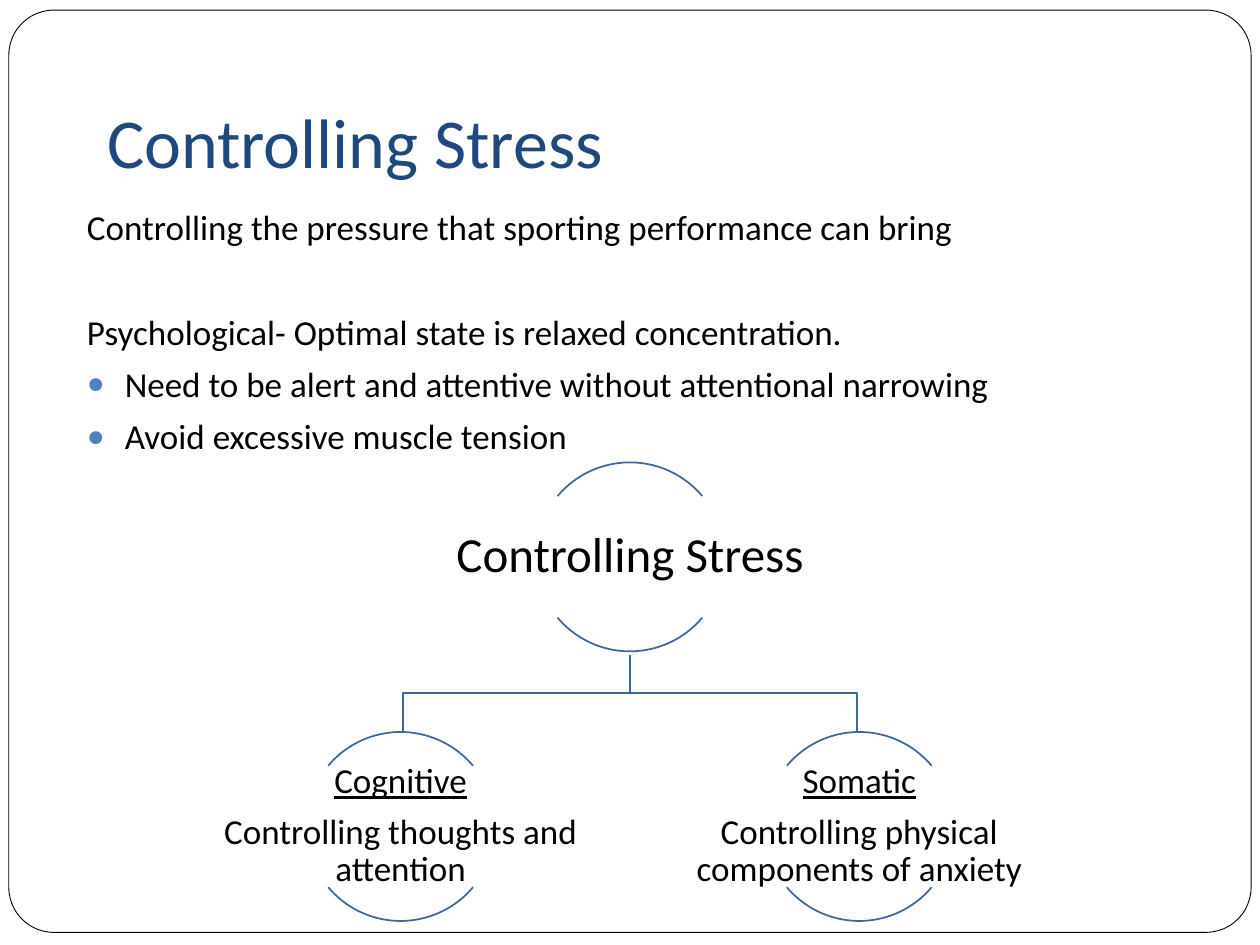
"""Builds a slide on controlling stress with a two-branch hierarchy."""
from dataclasses import dataclass

from lxml.etree import SubElement
from pptx import Presentation
from pptx.dml.color import RGBColor
from pptx.enum.shapes import MSO_SHAPE as Preset
from pptx.enum.text import MSO_ANCHOR as Anchor, MSO_AUTO_SIZE as AutoSize, PP_ALIGN as Align
from pptx.oxml.ns import qn
from pptx.util import Inches, Pt

COLUMNS, ROWS = 100, 75


@dataclass(frozen=True)
class Theme:
    font: str = "Calibri"
    title: str = "1F497D"
    ink: str = "000000"
    paper: str = "FFFFFF"
    branch: str = "3F6797"
    bullet: str = "4F81BD"
    title_size: int = 40
    root_size: int = 28
    text_size: int = 20
    list_gap: float = 5.8


class StressSlide:
    def __init__(self, deck, theme):
        self.theme = theme
        self.column = deck.slide_width / COLUMNS
        self.row = deck.slide_height / ROWS
        self.slide = deck.slides.add_slide(deck.slide_layouts[1])
        self.shapes = self.slide.shapes

    def place(self, left, top, width, height):
        return (round(left * self.column), round(top * self.row),
                round(width * self.column), round(height * self.row))

    def move(self, holder, *box):
        holder.left, holder.top, holder.width, holder.height = self.place(*box)

    def type(self, paragraph, size, color, underline=None):
        font = paragraph.font
        font.name, font.size, font.underline = self.theme.font, Pt(size), underline
        font.color.rgb = RGBColor.from_string(color)

    def outline(self, shape, color, width):
        shape.shadow.inherit = False
        shape.fill.background()
        shape.line.color.rgb = RGBColor.from_string(color)
        shape.line.width = Pt(width)

    def frame(self, *box):
        border = self.shapes.add_shape(Preset.ROUNDED_RECTANGLE, *self.place(*box))
        border.adjustments[0] = 0.049
        self.outline(border, self.theme.ink, 0.5)
        border.fill.solid()
        border.fill.fore_color.rgb = RGBColor.from_string(self.theme.paper)
        border.element.getparent().insert(2, border.element)

    def title(self, wording, *box):
        heading = self.shapes.title
        self.move(heading, *box)
        frame = heading.text_frame
        frame.text = wording
        frame.auto_size = AutoSize.NONE
        frame.vertical_anchor = Anchor.BOTTOM
        frame.margin_bottom = Inches(0.1)
        frame.paragraphs[0].alignment = Align.LEFT
        self.type(frame.paragraphs[0], self.theme.title_size, self.theme.title)

    def points(self, entries, *box):
        body = self.slide.placeholders[1]
        self.move(body, *box)
        frame = body.text_frame
        frame.auto_size = AutoSize.NONE
        frame.text = "\n".join(wording for wording, _, _ in entries)
        for paragraph, (_, bulleted, gap) in zip(frame.paragraphs, entries):
            self.bullet(paragraph, bulleted)
            paragraph.space_before = Pt(gap)
            self.type(paragraph, self.theme.text_size, self.theme.ink)

    def bullet(self, paragraph, bulleted):
        properties = paragraph._p.get_or_add_pPr()
        indent = Inches(0.3) if bulleted else 0
        properties.set("marL", str(indent))
        properties.set("indent", str(-indent))
        if not bulleted:
            SubElement(properties, qn("a:buNone"))
            return
        color = SubElement(properties, qn("a:buClr"))
        SubElement(color, qn("a:srgbClr"), val=self.theme.bullet)
        SubElement(properties, qn("a:buSzPct"), val="85000")
        SubElement(properties, qn("a:buChar"), char="●")

    def branch(self, start_x, start_y, end_x, end_y):
        middle = (start_y + end_y) / 2
        corners = [(start_x, middle), (end_x, middle), (end_x, end_y)]
        builder = self.shapes.build_freeform(start_x, start_y, scale=(self.column, self.row))
        builder.add_line_segments(corners, close=False)
        self.outline(builder.convert_to_shape(), self.theme.branch, 1)

    def node(self, center, top, lines, size, diameter=15):
        for start, end in ((132, 192), (24, 84)):
            arc = self.shapes.add_shape(
                Preset.ARC, *self.place(center - diameter / 2, top, diameter, diameter))
            arc.adjustments[0], arc.adjustments[1] = start, end
            self.outline(arc, self.theme.branch, 1)
        label = self.shapes.add_textbox(
            *self.place(center - diameter, top + 2.7, 2 * diameter, 9.6))
        frame = label.text_frame
        frame.word_wrap = True
        frame.vertical_anchor = Anchor.MIDDLE
        frame.margin_left = frame.margin_right = Inches(0.01)
        frame.margin_top = frame.margin_bottom = Inches(0.01)
        frame.text = "\n".join(lines)
        for position, paragraph in enumerate(frame.paragraphs):
            paragraph.alignment = Align.CENTER
            paragraph.line_spacing = 0.9
            paragraph.space_after = Pt(0.35 * size)
            headed = len(lines) > 1 and position == 0
            self.type(paragraph, size, self.theme.ink, headed or None)


def main():
    theme = Theme()
    deck = Presentation()
    deck.slide_width, deck.slide_height = Inches(10), Inches(7.5)
    stress = StressSlide(deck, theme)
    stress.frame(0.7, 0.8, 98.6, 73.2)
    stress.title("Controlling Stress", 7.5, 3, 87.5, 12.5)

    gap = theme.list_gap
    section_gap = 2 * gap + 1.22 * theme.text_size
    stress.points([
        ("Controlling the pressure that sporting performance can bring", False, gap),
        ("Psychological- Optimal state is relaxed concentration.", False, section_gap),
        ("Need to be alert and attentive without attentional narrowing", True, gap),
        ("Avoid excessive muscle tension", True, gap),
    ], 5.9, 15.8, 89.1, 55.5)

    root_x, root_top, child_top, spread = 50, 36.7, 58.1, 18.2
    children = [
        (root_x - spread, ["Cognitive", "Controlling thoughts and attention"]),
        (root_x + spread, ["Somatic", "Controlling physical components of anxiety"]),
    ]
    for child_x, _ in children:
        stress.branch(root_x, root_top + 15, child_x, child_top)
    stress.node(root_x, root_top, ["Controlling Stress"], theme.root_size)
    for child_x, lines in children:
        stress.node(child_x, child_top, lines, theme.text_size)
    deck.save("out.pptx")


if __name__ == "__main__":
    main()
